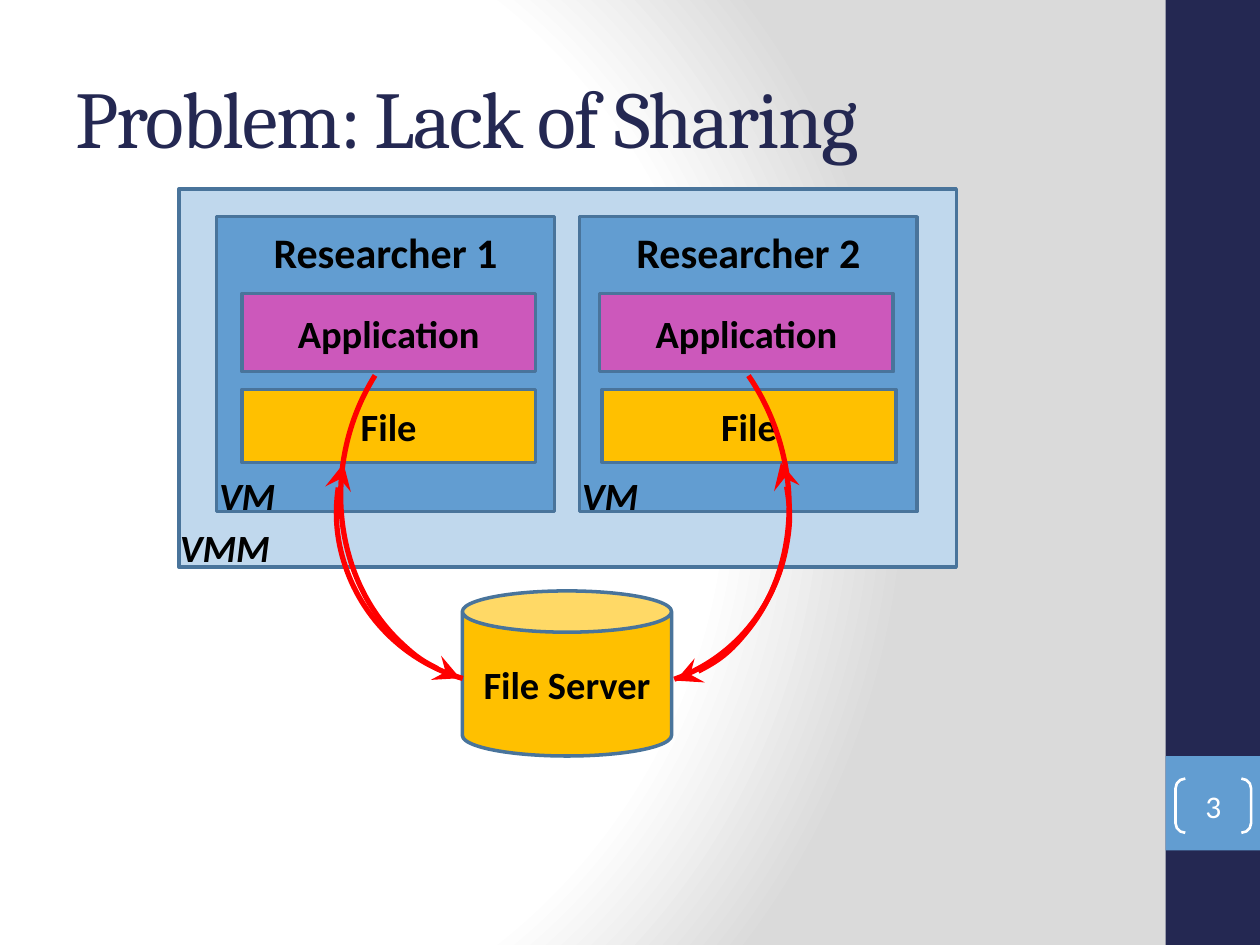
from lxml.etree import SubElement
from pptx import Presentation
from pptx.dml.color import RGBColor
from pptx.enum.shapes import MSO_SHAPE as Shape
from pptx.enum.text import MSO_ANCHOR as Anchor, PP_ALIGN as Align
from pptx.oxml import parse_xml
from pptx.oxml.ns import nsdecls, qn
from pptx.util import Pt

PX = 9144  # 100 px to the inch
NAVY, BLUE, PALE, OUTLINE = "242852", "629DD1", "C0D8ED", "49749B"
GOLD, PURPLE, RED, WHITE, BLACK = "FFC000", "CC58BB", "FF0000", "FFFFFF", "000000"


def rgb(value):
    return RGBColor.from_string(value)


def emu(*lengths):
    return [length * PX for length in lengths]


def write(shape, text, size=22, color=BLACK, bold=True, italic=False,
          align=Align.CENTER, font="Calibri"):
    line = shape.text_frame.paragraphs[0]
    line.text = text
    line.alignment = align
    line.font.name, line.font.size = font, Pt(size)
    line.font.bold, line.font.italic = bold, italic
    line.font.color.rgb = rgb(color)


def add_block(slide, box, fill=None, line=OUTLINE, width=2, kind=Shape.RECTANGLE, text=None):
    block = slide.shapes.add_shape(kind, *emu(*box))
    block.shadow.inherit = False
    if fill:
        block.fill.solid()
        block.fill.fore_color.rgb = rgb(fill)
    else:
        block.fill.background()
    if line:
        block.line.color.rgb = rgb(line)
        block.line.width = Pt(width)
    else:
        block.line.fill.background()
    if text:
        write(block, text)
    return block


def add_label(slide, box, text, **style):
    label = slide.shapes.add_textbox(*emu(*box))
    label.text_frame.word_wrap = True
    write(label, text, **style)


def paint_background(slide):
    slide.background.fill.solid()
    solid = slide.background._cSld.bg.bgPr.find(qn("a:solidFill"))
    stops = "".join(
        f'<a:gs pos="{percent * 1000}"><a:srgbClr val="{color}"/></a:gs>'
        for percent, color in [(0, WHITE), (75, WHITE), (100, "DADADA")])
    solid.getparent().replace(solid, parse_xml(
        f'<a:gradFill {nsdecls("a")} rotWithShape="1"><a:gsLst>{stops}</a:gsLst>'
        '<a:path path="circle"><a:fillToRect l="20000" t="50000" r="100000" b="50000"/>'
        '</a:path></a:gradFill>'))


def add_title(slide, box, text):
    title = slide.shapes.title
    title.left, title.top, title.width, title.height = emu(*box)
    title.text_frame.vertical_anchor = Anchor.MIDDLE
    write(title, text, size=46, color=NAVY, bold=False, align=Align.LEFT, font="Cambria")
    title.text_frame.paragraphs[0].runs[0]._r.get_or_add_rPr().set("spc", "-100")


def add_sidebar(slide, left, top, width, height, number):
    add_block(slide, (left, top, width, height), NAVY, line=None)
    add_block(slide, (left, top + 600, width, width), BLUE, line=None)
    brackets = add_block(slide, (left + 8, top + 618, 60, 43), line=WHITE, width=1.5,
                         kind=Shape.DOUBLE_BRACKET)
    brackets.adjustments[0] = 0.18
    frame = brackets.text_frame
    frame.margin_left = frame.margin_top = frame.margin_right = frame.margin_bottom = 0
    write(brackets, number, size=18, color=WHITE, bold=False)


def add_vm(slide, left, top, researcher, app_inset, file_inset):
    width = 268
    add_block(slide, (left, top, width, 234), BLUE)
    add_label(slide, (left, top + 3, width, 50), researcher, size=24)
    add_block(slide, (left + app_inset, top + 61, 233, 62), PURPLE, text="Application")
    add_block(slide, (left + file_inset, top + 137, 233, 58), GOLD, text="File")
    add_label(slide, (left - 8, top + 198, 73, 47), "VM", italic=True, align=Align.LEFT)


def add_vmm(slide, left, top, width, height):
    add_block(slide, (left, top, width, height), PALE)
    add_vm(slide, left + 30, top + 22, "Researcher 1", 20, 20)
    add_vm(slide, left + 318, top + 22, "Researcher 2", 16, 18)
    add_label(slide, (left - 9, top + 261, 103, 47), "VMM", italic=True, align=Align.LEFT)


def add_arc_arrow(slide, box, rotation, start, end, arrow_end):
    arc = add_block(slide, box, line=RED, width=3, kind=Shape.ARC)
    arc.rotation = rotation
    arc.adjustments[0], arc.adjustments[1] = start, end
    SubElement(arc.line._get_or_add_ln(), qn(f"a:{arrow_end}"),
               type="stealth", w="lg", len="lg")


def add_server_links(slide, left, top):
    """Join each application and file to the server with a pair of curved arrows."""
    for (x, y, width, height), *curve in [
        ((125, 120, 278, 274), 190, 165.84, 3.8, "tailEnd"),
        ((129, 77, 278, 318), 190, 165.85, 16.85, "headEnd"),
        ((208, 121, 278, 274), 72.3, 162.23, 215, "headEnd"),
        ((185, 101, 320, 274), 72.3, 148.61, 215.87, "tailEnd"),
    ]:
        add_arc_arrow(slide, (left + x, top + y, width, height), *curve)


def main():
    deck = Presentation()
    deck.slide_width, deck.slide_height = emu(1000, 750)
    slide = deck.slides.add_slide(deck.slide_layouts[5])
    paint_background(slide)
    add_sidebar(slide, 925, 0, 75, 750, "3")
    add_title(slide, (50, 30, 833, 125), "Problem: Lack of Sharing")
    add_block(slide, (367, 469, 166, 131), GOLD, kind=Shape.CAN, text="File Server")
    add_vmm(slide, 142, 150, 617, 300)
    add_server_links(slide, 142, 150)
    deck.save("out.pptx")


if __name__ == "__main__":
    main()
